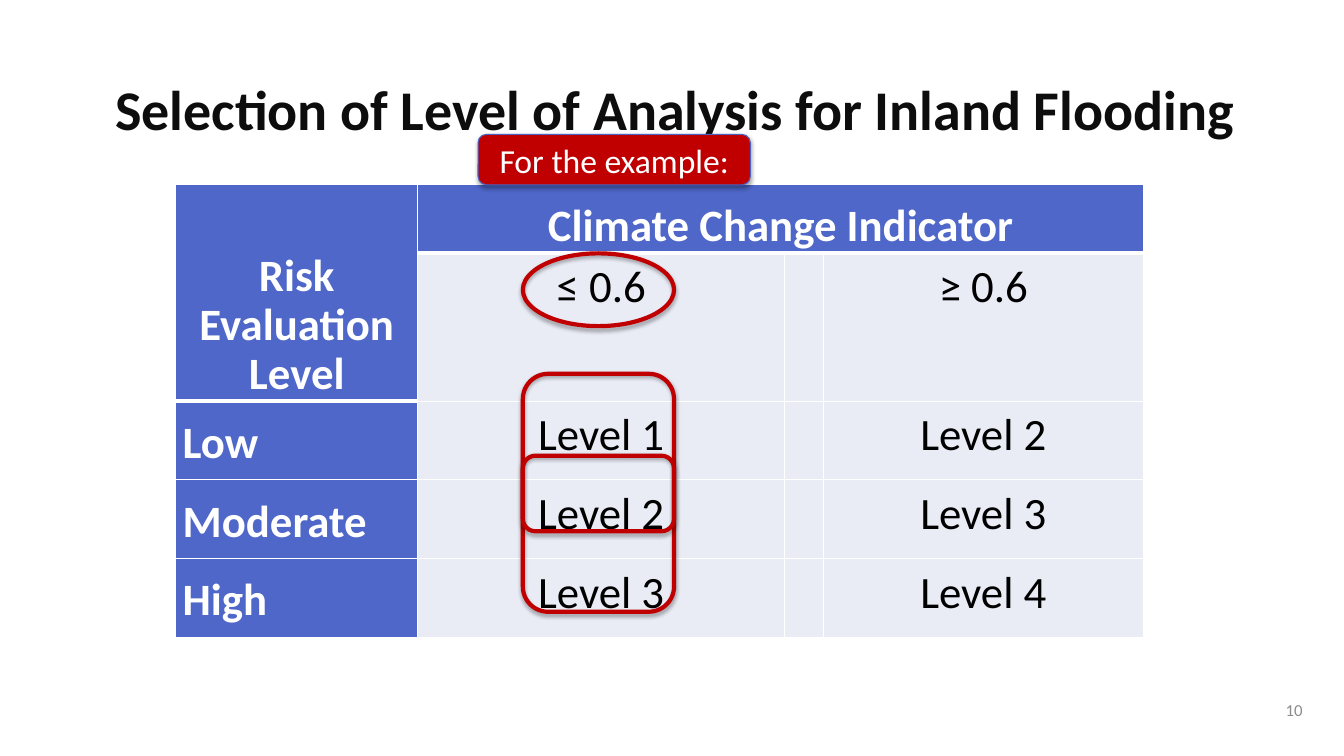
"""Builds the slide on choosing the level of analysis for inland flooding."""
import pptx
import pptx.dml.color
import pptx.enum.shapes
import pptx.enum.text
import pptx.oxml
import pptx.oxml.ns
import pptx.util

Pt = pptx.util.Pt
RGB = pptx.dml.color.RGBColor.from_string
ALIGN = pptx.enum.text.PP_ALIGN
ANCHOR = pptx.enum.text.MSO_ANCHOR
SHAPE = pptx.enum.shapes.MSO_SHAPE
NS = pptx.oxml.ns.nsdecls("a")

theme = {
    "font": "Calibri",
    "ink": "0D0D0D", "black": "000000", "white": "FFFFFF", "gray": "8C8C8C",
    "head": "4E67C8", "body": "E9EBF5", "mark": "C00000", "edge": "4963C7",
    "title": 40, "cell": 32, "label": 24, "page": 12,
}


def write(frame, text, size, color, bold=False, align=ALIGN.CENTER, space=None):
    """Fill a text frame with one formatted paragraph."""
    frame.text = text
    para = frame.paragraphs[0]
    para.alignment = align
    para.line_spacing = space
    style = {"name": theme["font"], "size": Pt(theme[size]), "bold": bold}
    for font in [para.font] + [run.font for run in para.runs]:
        for key, value in style.items():
            setattr(font, key, value)
        font.color.rgb = RGB(theme[color])


def place(shape, box):
    """Move and size a shape in points."""
    for key, value in zip(("left", "top", "width", "height"), box):
        setattr(shape, key, Pt(value))


deck = pptx.Presentation()
deck.slide_width, deck.slide_height = Pt(960), Pt(540)
slide = deck.slides.add_slide(deck.slide_layouts[5])
shapes = slide.shapes

title = shapes.title
place(title, (28, 42.5, 908, 69))
frame = title.text_frame
frame.auto_size = pptx.enum.text.MSO_AUTO_SIZE.NONE
frame.vertical_anchor = ANCHOR.MIDDLE
write(frame, "Selection of Level of Analysis for Inland Flooding", "title", "ink", True)

page = shapes.add_textbox(Pt(713.5), Pt(498), Pt(224), Pt(18))
page.text_frame.word_wrap = True
page.text_frame.vertical_anchor = ANCHOR.MIDDLE
write(page.text_frame, "10", "page", "gray", align=ALIGN.RIGHT)

rows = [
    ["Risk Evaluation Level", "Climate Change Indicator", "", ""],
    ["", "≤ 0.6", "", "≥ 0.6"],
    ["Low", "Level 1", "", "Level 2"],
    ["Moderate", "Level 2", "", "Level 3"],
    ["High", "Level 3", "", "Level 4"],
]
widths = [173, 262, 27.5, 229]
heights = [48.75, 87.25, 56.25, 56.25, 56.25]
grid = shapes.add_table(5, 4, Pt(125.5), Pt(132), Pt(sum(widths)), Pt(sum(heights))).table
grid.first_row = grid.horz_banding = False
for col, width in zip(grid.columns, widths):
    col.width = Pt(width)
for row, height in zip(grid.rows, heights):
    row.height = Pt(height)

pads = {"margin_left": Pt(5), "margin_right": Pt(5), "margin_top": Pt(1), "margin_bottom": Pt(1)}
thick = {(1, 0), (0, 1), (0, 2), (0, 3)}
for r, line in enumerate(rows):
    for c, text in enumerate(line):
        cell = grid.cell(r, c)
        top, side = r == 0, c == 0
        head = top or side
        for key, value in pads.items():
            setattr(cell, key, value)
        cell.vertical_anchor = ANCHOR.BOTTOM if top else ANCHOR.MIDDLE if side else ANCHOR.TOP
        write(cell.text_frame, text, "cell", "white" if head else "black", head,
              ALIGN.LEFT if side and not top else ALIGN.CENTER, 0.9 if top else 1.1)
        cell.fill.solid()
        cell.fill.fore_color.rgb = RGB(theme["head" if head else "body"])
        bold = {"T": (r - 1, c) in thick, "B": (r, c) in thick}
        props = cell._tc.get_or_add_tcPr()
        for i, edge in enumerate("LRTB"):
            width = Pt(3 if bold.get(edge) else 1)
            props.insert(i, pptx.oxml.parse_xml(
                f'<a:ln{edge} {NS} w="{width}"><a:solidFill><a:srgbClr val="{theme["white"]}"/>'
                f'</a:solidFill></a:ln{edge}>'))
grid.cell(0, 0).merge(grid.cell(1, 0))
grid.cell(0, 1).merge(grid.cell(0, 3))

marks = [
    (SHAPE.OVAL, (373.5, 181, 108, 52), ""),
    (SHAPE.ROUNDED_RECTANGLE, (373.5, 267, 108, 170), ""),
    (SHAPE.ROUNDED_RECTANGLE, (341.5, 96, 194.5, 36), "For the example:"),
    (SHAPE.ROUNDED_RECTANGLE, (373.5, 325.5, 108, 54), ""),
]
for kind, box, text in marks:
    mark = shapes.add_shape(kind, *map(Pt, box))
    mark.shadow.inherit = False
    mark.line.color.rgb = RGB(theme["edge" if text else "mark"])
    mark.line.width = Pt(0.75 if text else 3)
    if text:
        mark.fill.solid()
        mark.fill.fore_color.rgb = RGB(theme["mark"])
        mark.text_frame.vertical_anchor = ANCHOR.MIDDLE
        write(mark.text_frame, text, "label", "white")
    else:
        mark.fill.background()
    glow = mark._element.spPr.find(pptx.oxml.ns.qn("a:effectLst"))
    glow.append(pptx.oxml.parse_xml(
        f'<a:outerShdw {NS} blurRad="{Pt(3.1)}" dist="{Pt(1.8)}" dir="5400000" rotWithShape="0">'
        f'<a:srgbClr val="{theme["black"]}"><a:alpha val="35000"/></a:srgbClr></a:outerShdw>'))

deck.save("out.pptx")
